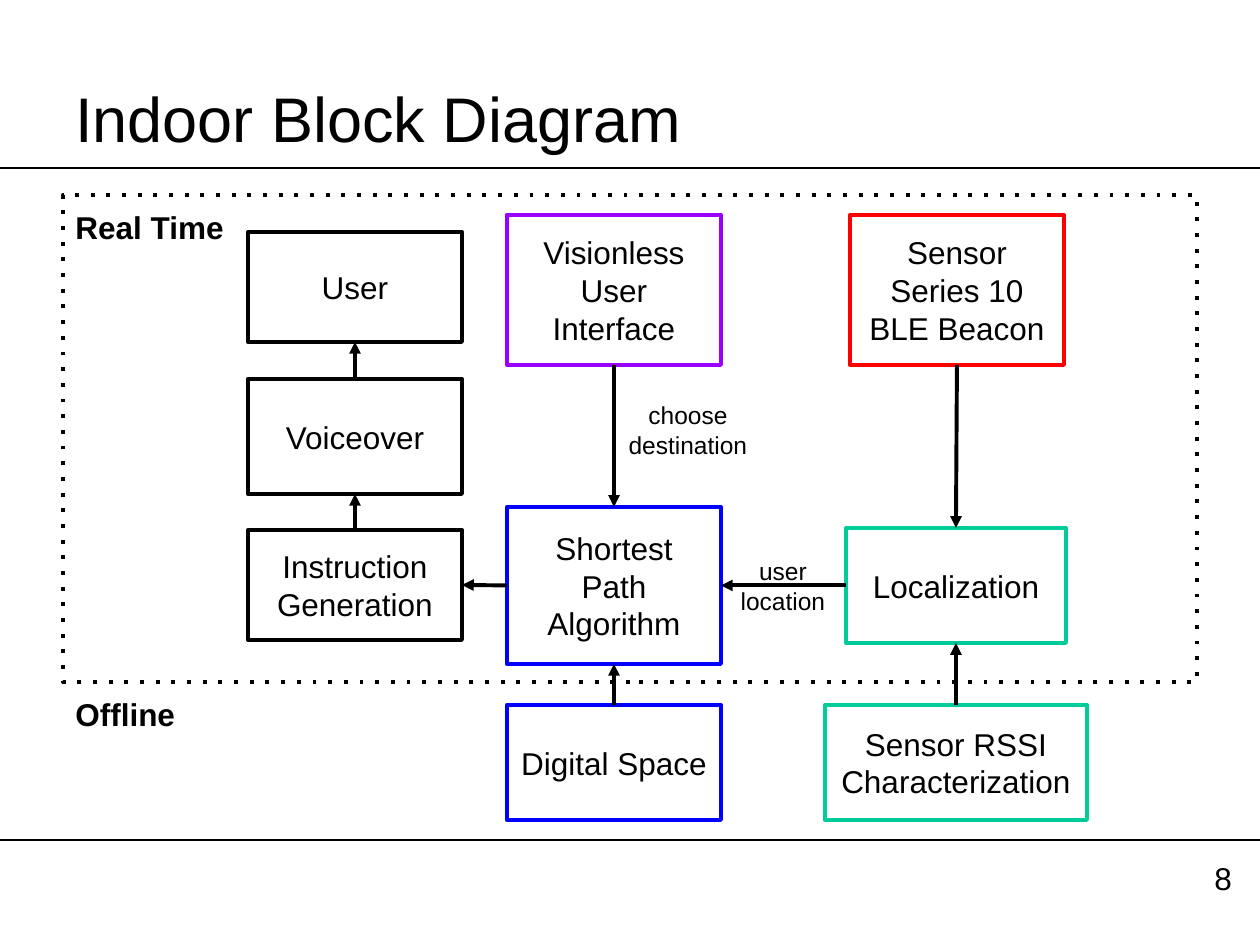
import lxml.etree
import pptx
import pptx.dml.color
import pptx.enum.shapes
import pptx.enum.text
import pptx.oxml.ns
import pptx.util

PX = 914400 / 126
COLORS = {
    "black": "000000",
    "blue": "0000FF",
    "purple": "9900FF",
    "red": "FF0000",
    "green": "00CC99",
}
TOP, LEFT, BOTTOM, RIGHT = range(4)
ALIGN = pptx.enum.text.PP_ALIGN
ANCHOR = pptx.enum.text.MSO_ANCHOR
RECTANGLE = pptx.enum.shapes.MSO_SHAPE.RECTANGLE
STRAIGHT = pptx.enum.shapes.MSO_CONNECTOR.STRAIGHT


def px(*lengths):
    return [round(length * PX) for length in lengths]


def write(text, shape, size=18, bold=False, align=ALIGN.CENTER, anchor=ANCHOR.MIDDLE):
    frame = shape.text_frame
    frame.word_wrap = True
    frame.vertical_anchor = anchor
    inset = pptx.util.Inches(0.1)
    frame.margin_left = frame.margin_right = inset
    frame.margin_top = frame.margin_bottom = inset
    frame.text = text
    for paragraph in frame.paragraphs:
        paragraph.alignment = align
        paragraph.font.name = "Arial"
        paragraph.font.size = pptx.util.Pt(size)
        paragraph.font.bold = bold
        paragraph.font.color.rgb = pptx.dml.color.RGBColor.from_string(COLORS["black"])


presentation = pptx.Presentation()
presentation.slide_width, presentation.slide_height = px(1260, 945)
slide = presentation.slides.add_slide(presentation.slide_layouts[6])
shapes = slide.shapes
outlined = []

for rule_y in (168, 840):
    rule = shapes.add_connector(STRAIGHT, *px(0, rule_y, 1260, rule_y))
    outlined.append((rule, "black", 1, None))

real_time_frame = shapes.add_shape(RECTANGLE, *px(63, 195, 1134, 487))
real_time_frame.fill.background()
outlined.append((real_time_frame, "black", 2.25, ("a:prstDash", "val", "dot")))

blocks = {}
for key, text, color, *bounds in [
    ("user", "User", "black", 248, 232, 214, 110),
    ("voiceover", "Voiceover", "black", 248, 379, 214, 115),
    ("instructions", "Instruction Generation", "black", 248, 530, 214, 110),
    ("interface", "Visionless User Interface", "purple", 507, 215, 214, 150),
    ("path_finder", "Shortest Path Algorithm", "blue", 507, 507, 214, 157),
    ("digital_space", "Digital Space", "blue", 507, 705, 214, 115),
    ("beacon", "Sensor Series 10 BLE Beacon", "red", 850, 215, 214, 150),
    ("localization", "Localization", "green", 846, 528, 220, 115),
    ("rssi", "Sensor RSSI Characterization", "green", 825, 705, 262, 115),
]:
    block = shapes.add_shape(RECTANGLE, *px(*bounds))
    block.fill.background()
    write(text, block)
    blocks[key] = block
    outlined.append((block, color, 2.25, None))

for source, source_side, target, target_side in [
    ("instructions", TOP, "voiceover", BOTTOM),
    ("voiceover", TOP, "user", BOTTOM),
    ("interface", BOTTOM, "path_finder", TOP),
    ("path_finder", LEFT, "instructions", RIGHT),
    ("localization", LEFT, "path_finder", RIGHT),
    ("digital_space", TOP, "path_finder", BOTTOM),
    ("beacon", BOTTOM, "localization", TOP),
    ("rssi", TOP, "localization", BOTTOM),
]:
    arrow = shapes.add_connector(STRAIGHT, 0, 0, 0, 0)
    arrow.begin_connect(blocks[source], source_side)
    arrow.end_connect(blocks[target], target_side)
    outlined.append((arrow, "black", 2.25, ("a:tailEnd", "type", "triangle")))

for shape, color, width, detail in outlined:
    shape.line.color.rgb = pptx.dml.color.RGBColor.from_string(COLORS[color])
    shape.line.width = pptx.util.Pt(width)
    properties = shape._element.spPr
    if detail:
        tag, attribute, value = detail
        outline = properties.find(pptx.oxml.ns.qn("a:ln"))
        lxml.etree.SubElement(outline, pptx.oxml.ns.qn(tag)).set(attribute, value)
    lxml.etree.SubElement(properties, pptx.oxml.ns.qn("a:effectLst"))

heading = {"bold": True, "align": ALIGN.LEFT, "anchor": ANCHOR.TOP}
for text, bounds, style in [
    ("Indoor Block Diagram", (63, 38, 1134, 158), {"size": 36, "align": ALIGN.LEFT}),
    ("Real Time", (63, 195, 197, 48), heading),
    ("Offline", (63, 682, 197, 48), heading),
    ("choose\ndestination", (613, 401, 150, 57), {"size": 14}),
    ("user location", (720, 557, 126, 57), {"size": 14}),
    ("8", (1202, 846, 45, 59), {"align": ALIGN.LEFT, "anchor": ANCHOR.TOP}),
]:
    write(text, shapes.add_textbox(*px(*bounds)), **style)

presentation.save("out.pptx")
